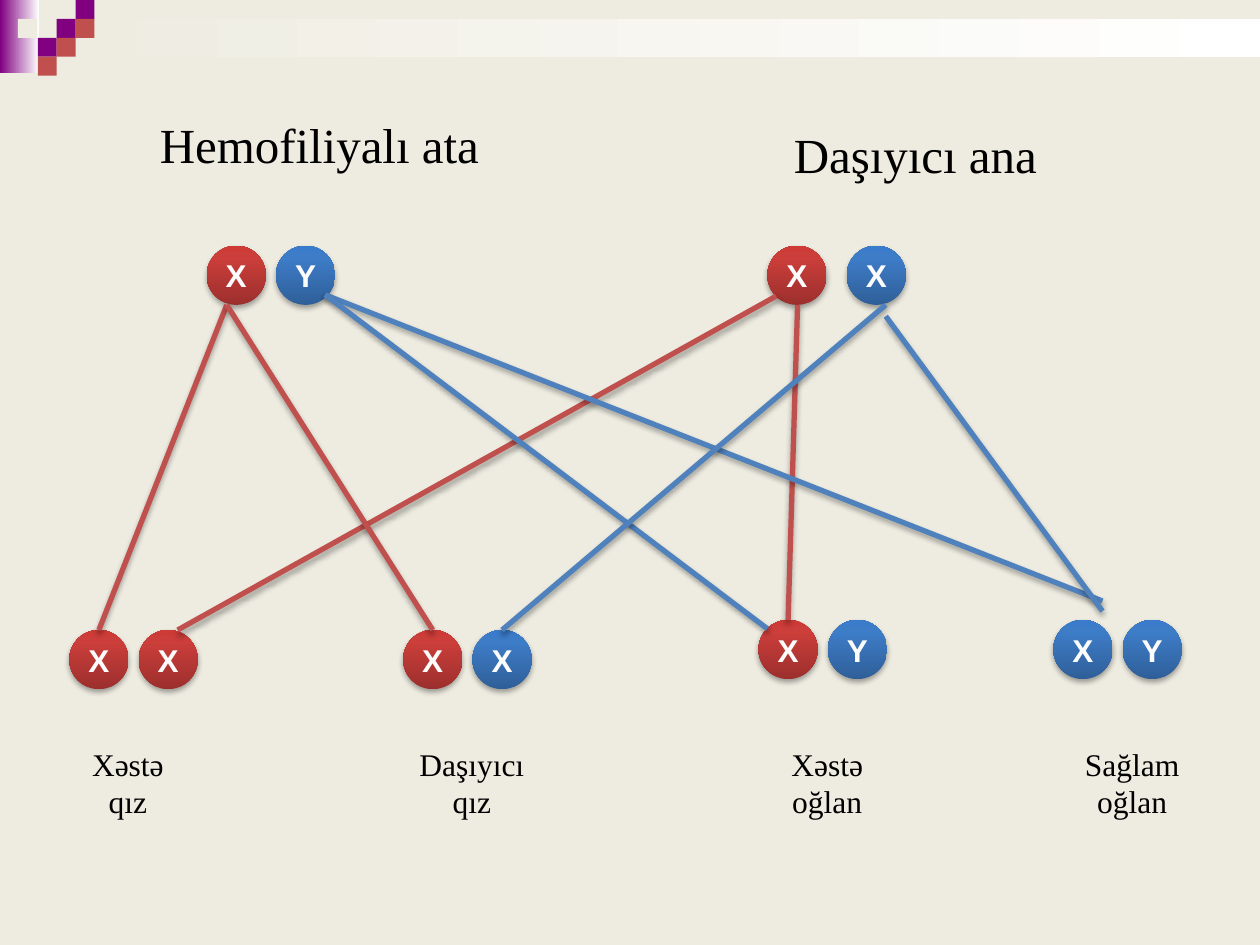
from copy import deepcopy

from pptx import Presentation
from pptx.dml.color import RGBColor
from pptx.enum.shapes import MSO_CONNECTOR as Connector, MSO_SHAPE as Shape
from pptx.enum.text import MSO_ANCHOR as Anchor, PP_ALIGN as Align
from pptx.oxml import parse_xml
from pptx.oxml.ns import nsdecls, qn
from pptx.util import Inches, Pt

COLORS = {
    "paper": "EEECE1", "white": "FFFFFF", "black": "000000", "purple": "800080",
    "red": "C0504D", "blue": "4F81BD", "letter": "FCFCFD",
}
BALLS = {
    "red": [(0, "9C2F2D"), (0.8, "CB3E3A"), (1, "CE3B37")],
    "blue": [(0, "2F5F99"), (0.8, "3D7CC7"), (1, "3A7CCB")],
}
SHADOW = (
    f'<a:effectLst {nsdecls("a")}><a:outerShdw blurRad="40000" dist="23000" dir="5400000" '
    'rotWithShape="0"><a:srgbClr val="000000"><a:alpha val="35000"/></a:srgbClr>'
    "</a:outerShdw></a:effectLst>"
)
BALL = 0.47
SQUARE = 0.15


def rgb(name):
    return RGBColor.from_string(COLORS[name])


class Pedigree:
    """Draws the inheritance diagram's elements on one page."""

    def __init__(self, page):
        self.page = page
        self.shapes = page.shapes
        page.background.fill.solid()
        page.background.fill.fore_color.rgb = rgb("paper")

    def shape(self, kind, left, top, width, height):
        shape = self.shapes.add_shape(
            kind, Inches(left), Inches(top), Inches(width), Inches(height))
        shape.line.fill.background()
        shape.shadow.inherit = False
        return shape

    def gradient(self, shape, stops, angle):
        shape.fill.gradient()
        shape.fill.gradient_angle = angle
        stop_list = shape._element.spPr.find(".//" + qn("a:gsLst"))
        for _ in stops[2:]:
            stop_list.append(deepcopy(stop_list[0]))
        for stop, (position, color) in zip(shape.fill.gradient_stops, stops):
            stop.position = position
            stop.color.rgb = RGBColor.from_string(color)

    def band(self, left, top, width, height, start):
        band = self.shape(Shape.RECTANGLE, left, top, width, height)
        self.gradient(band, [(0, COLORS[start]), (1, COLORS["white"])], 0)

    def square(self, left, top, color):
        square = self.shape(Shape.RECTANGLE, left, top, SQUARE, SQUARE)
        square.fill.solid()
        square.fill.fore_color.rgb = rgb(color)

    def style(self, para, font, size, color, align=Align.CENTER):
        para.alignment = align
        para.font.name = font
        para.font.size = Pt(size)
        para.font.color.rgb = rgb(color)

    def text(self, words, left, top, width, height, size, align=Align.CENTER):
        box = self.shapes.add_textbox(
            Inches(left), Inches(top), Inches(width), Inches(height))
        box.text_frame.word_wrap = True
        para = box.text_frame.paragraphs[0]
        para.text = words
        self.style(para, "Times New Roman", size, "black", align)

    def ball(self, letter, color, left, top):
        ball = self.shape(Shape.OVAL, left, top, BALL, BALL)
        self.gradient(ball, BALLS[color], 90)
        self.cast_shadow(ball)
        frame = ball.text_frame
        frame.margin_left = frame.margin_right = frame.margin_top = frame.margin_bottom = 0
        frame.vertical_anchor = Anchor.MIDDLE
        frame.word_wrap = False
        para = frame.paragraphs[0]
        para.text = letter
        self.style(para, "Arial", 18, "letter")
        para.font.bold = True
        return ball

    def pair(self, letters, colors, left, top, step=0.55):
        return [self.ball(letter, color, left + index * step, top)
                for index, (letter, color) in enumerate(zip(letters, colors))]

    def line(self, start, end, color, child=None):
        line = self.shapes.add_connector(
            Connector.STRAIGHT, *[Inches(value) for value in (*start, *end)])
        if child is not None:
            line.begin_connect(child, 0)
        line.line.color.rgb = rgb(color)
        line.line.width = Pt(3)
        self.cast_shadow(line)

    def cast_shadow(self, shape):
        properties = shape._element.spPr
        for effect in properties.findall(qn("a:effectLst")):
            properties.remove(effect)
        properties.append(parse_xml(SHADOW))


def main():
    deck = Presentation()
    deck.slide_width, deck.slide_height = Inches(10), Inches(7.5)
    art = Pedigree(deck.slides.add_slide(deck.slide_layouts[6]))

    art.band(0, 0, 0.31, 0.58, "purple")
    art.band(0.45, 0.15, 9.55, 0.3, "paper")
    for column, row, color in [
        (3, 1, "purple"), (4, 0, "purple"), (4, 1, "red"), (2, 2, "purple"),
        (0.95, 1, "paper"), (3, 2, "red"), (2, 3, "red"),
    ]:
        art.square(column * SQUARE, row * SQUARE, color)

    art.text("Hemofiliyalı ata", 1.17, 0.86, 2.97, 0.57, 28, Align.LEFT)
    art.text("Daşıyıcı ana", 5.78, 0.94, 2.97, 0.57, 28)

    art.pair("XY", ("red", "blue"), 1.64, 1.95)
    art.pair("XX", ("red", "blue"), 6.09, 1.95, 0.63)
    sick_girl = art.pair("XX", ("red", "red"), 0.55, 5)
    carrier_girl = art.pair("XX", ("red", "blue"), 3.2, 5)
    sick_boy = art.pair("XY", ("red", "blue"), 6.02, 4.92)
    art.pair("XY", ("blue", "blue"), 8.36, 4.92)

    father_x, father_y, mother_x = (1.8, 2.42), (2.58, 2.34), (7.03, 2.42)
    for start, end, color, child in [
        ((0.78, 5), father_x, "red", sick_girl[0]),
        ((1.41, 5), (6.16, 2.35), "red", None),
        ((6.25, 4.92), (6.33, 2.42), "red", sick_boy[0]),
        ((8.75, 4.77), father_y, "blue", None),
        ((3.44, 5), father_x, "red", carrier_girl[0]),
        ((8.75, 4.85), (7.03, 2.51), "blue", None),
        ((6.09, 4.99), father_y, "blue", None),
        ((3.98, 5), mother_x, "blue", carrier_girl[1]),
    ]:
        art.line(start, end, color, child)

    for words, left in [
        ("Xəstə qız", 0.47), ("Daşıyıcı qız", 3.2),
        ("Xəstə oğlan", 6.02), ("Sağlam oğlan", 8.44),
    ]:
        art.text(words, left, 5.86, 1.09, 0.71, 18)

    deck.save("out.pptx")


if __name__ == "__main__":
    main()
